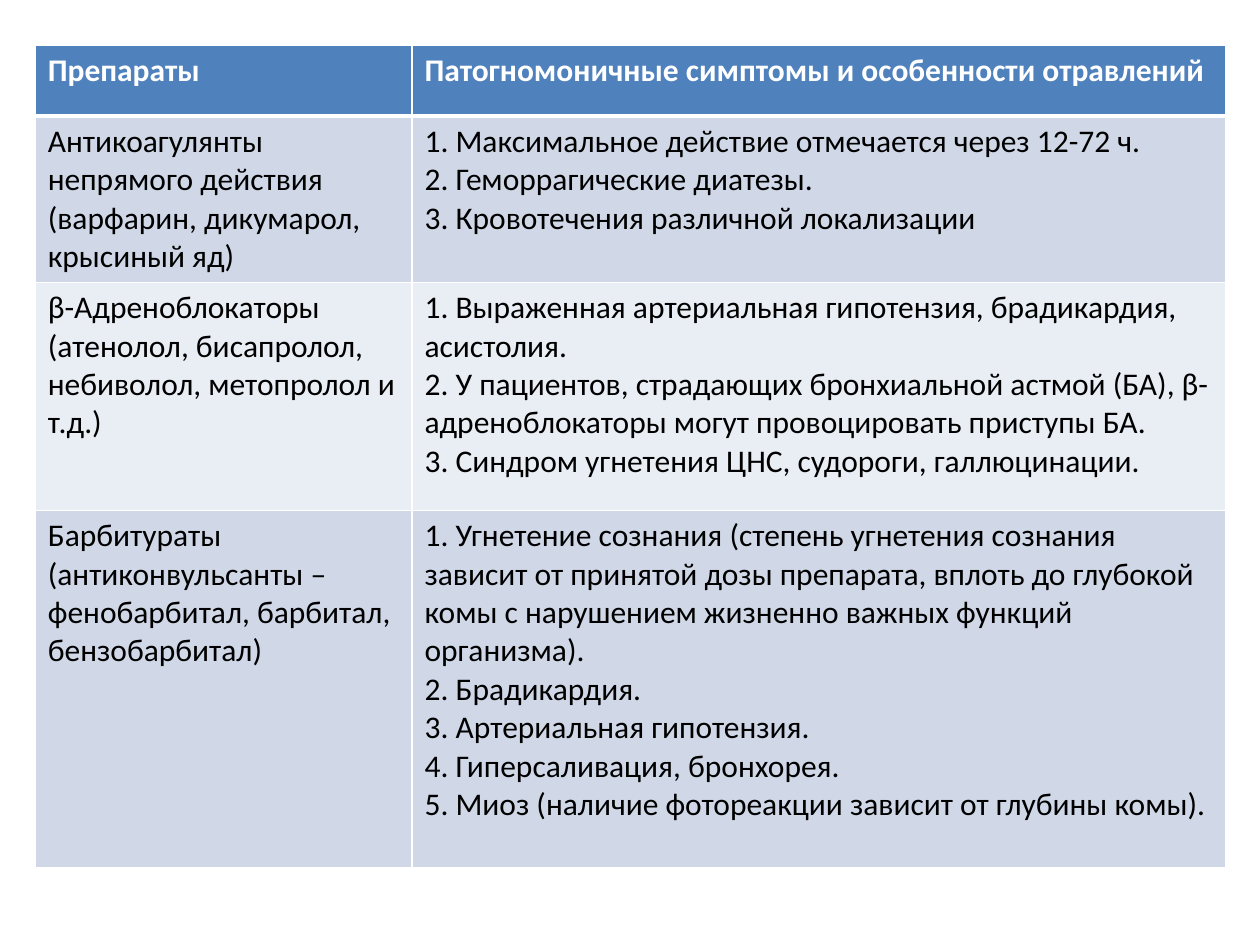
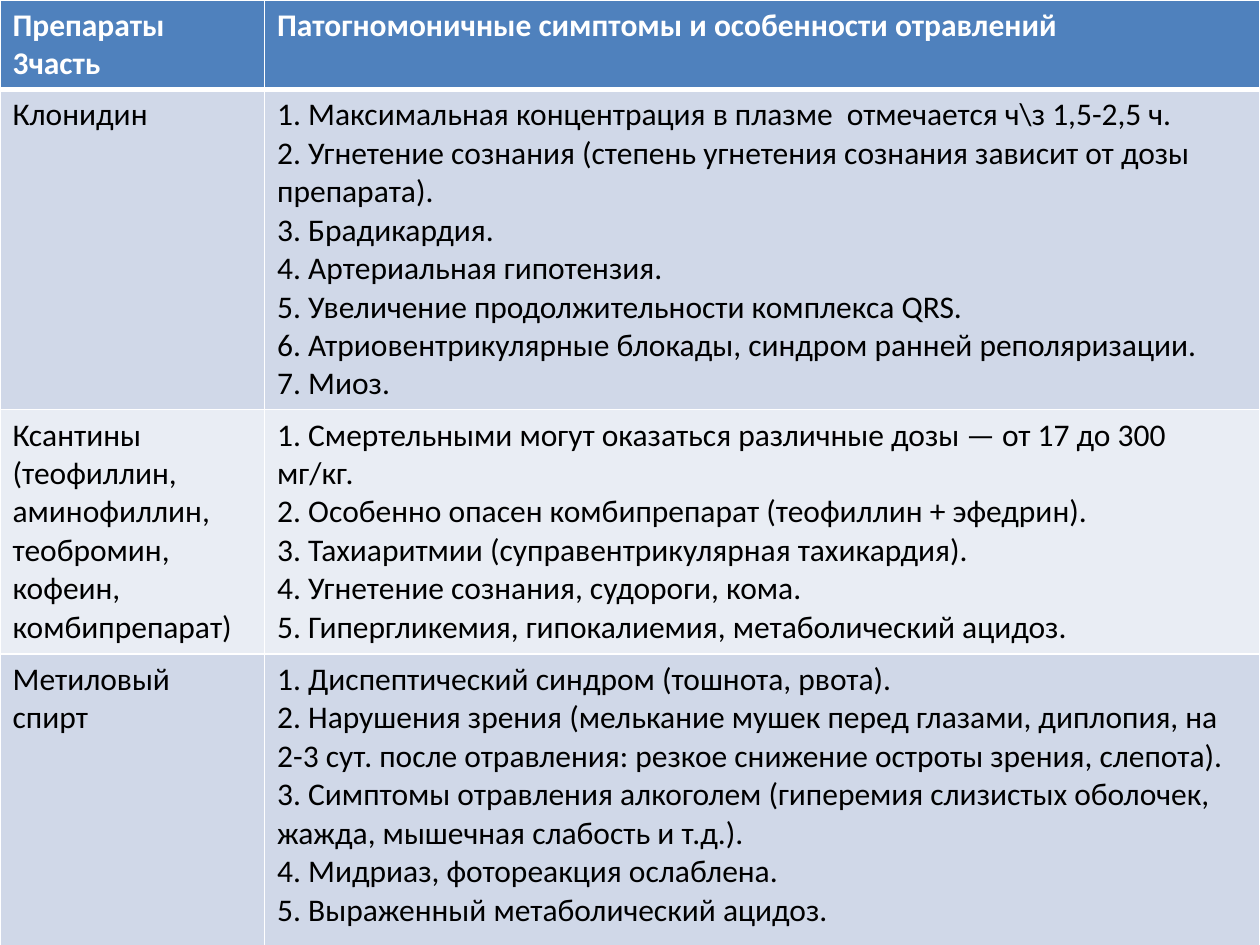
from lxml import etree
from pptx import Presentation
from pptx import util as u
from pptx.dml.color import RGBColor
from pptx.oxml.ns import qn

HEADER_FILL, BAND_FILLS = "4F81BD", ("D0D8E8", "E9EDF4")
HEADER_TEXT, BODY_TEXT, GRID = "FFFFFF", "000000", "FFFFFF"
FONT, TEXT_SIZE = "Calibri", 18
GRID_WIDTH, HEADER_RULE_WIDTH = 1, 3
SYMPTOMS = "Патогномоничные симптомы и особенности отравлений"

POISONINGS = [
    {
        "corner": (0.28, 0.36),
        "columns": (2.99, 6.46),
        "heights": (0.56, 1.31, 1.81, 2.84),
        "rows": [
            (["Препараты"], [SYMPTOMS]),
            (["Антикоагулянты", "непрямого действия",
              "(варфарин, дикумарол, крысиный яд)"],
             ["1. Максимальное действие отмечается через 12-72 ч.",
              "2. Геморрагические диатезы.",
              "3. Кровотечения различной локализации"]),
            (["β-Адреноблокаторы (атенолол, бисапролол, небиволол, метопролол и т.д.)"],
             ["1. Выраженная артериальная гипотензия, брадикардия, асистолия.",
              "2. У пациентов, страдающих бронхиальной астмой (БА), "
              "β-адреноблокаторы могут провоцировать приступы БА.",
              "3. Синдром угнетения ЦНС, судороги, галлюцинации."]),
            (["Барбитураты (антиконвульсанты – фенобарбитал, барбитал, бензобарбитал)"],
             ["1. Угнетение сознания (степень угнетения сознания зависит от принятой "
              "дозы препарата, вплоть до глубокой комы с нарушением жизненно важных "
              "функций организма).",
              "2. Брадикардия.",
              "3. Артериальная гипотензия.",
              "4. Гиперсаливация, бронхорея.",
              "5. Миоз (наличие фотореакции зависит от глубины комы)."]),
        ],
    },
    {
        "corner": (0, 0),
        "columns": (2.1, 7.9),
        "heights": (0.7, 2.54, 1.94, 3.23),
        "rows": [
            (["Препараты 3часть"], [SYMPTOMS]),
            (["Клонидин"],
             ["1. Максимальная концентрация в плазме  отмечается ч\\з 1,5-2,5 ч.",
              "2. Угнетение сознания (степень угнетения сознания зависит от дозы препарата).",
              "3. Брадикардия.",
              "4. Артериальная гипотензия.",
              "5. Увеличение продолжительности комплекса QRS.",
              "6. Атриовентрикулярные блокады, синдром ранней реполяризации.",
              "7. Миоз."]),
            (["Ксантины (теофиллин,", "аминофиллин,", "теобромин, кофеин,", "комбипрепарат)"],
             ["1. Смертельными могут оказаться различные дозы — от 17 до 300 мг/кг.",
              "2. Особенно опасен комбипрепарат (теофиллин + эфедрин).",
              "3. Тахиаритмии (суправентрикулярная тахикардия).",
              "4. Угнетение сознания, судороги, кома.",
              "5. Гипергликемия, гипокалиемия, метаболический ацидоз."]),
            (["Метиловый спирт"],
             ["1. Диспептический синдром (тошнота, рвота).",
              "2. Нарушения зрения (мелькание мушек перед глазами, диплопия, на 2-3 сут. "
              "после отравления: резкое снижение остроты зрения, слепота).",
              "3. Симптомы отравления алкоголем (гиперемия слизистых оболочек, жажда, "
              "мышечная слабость и т.д.).",
              "4. Мидриаз, фотореакция ослаблена.",
              "5. Выраженный метаболический ацидоз."]),
        ],
    },
]


def colour(hex_text):
    return RGBColor.from_string(hex_text)


def add_borders(cell, row):
    widths = {
        "L": GRID_WIDTH,
        "R": GRID_WIDTH,
        "T": HEADER_RULE_WIDTH if row == 1 else GRID_WIDTH,
        "B": HEADER_RULE_WIDTH if row == 0 else GRID_WIDTH,
    }
    properties = cell._tc.get_or_add_tcPr()
    for side, width in widths.items():
        border = etree.SubElement(properties, qn(f"a:ln{side}"), w=str(u.Pt(width)))
        fill = etree.SubElement(border, qn("a:solidFill"))
        etree.SubElement(fill, qn("a:srgbClr"), val=GRID)


def fill_cell(cell, lines, row):
    is_header = row == 0
    add_borders(cell, row)
    cell.fill.solid()
    cell.fill.fore_color.rgb = colour(HEADER_FILL if is_header else BAND_FILLS[(row - 1) % 2])
    cell.text_frame.text = "\n".join(lines)
    for paragraph in cell.text_frame.paragraphs:
        for run in paragraph.runs:
            run.font.name = FONT
            run.font.size = u.Pt(TEXT_SIZE)
            run.font.bold = is_header
            run.font.color.rgb = colour(HEADER_TEXT if is_header else BODY_TEXT)


def add_poisonings(slide, part):
    rows, columns, heights = part["rows"], part["columns"], part["heights"]
    box = (*part["corner"], sum(columns), sum(heights))
    table = slide.shapes.add_table(len(rows), len(columns), *map(u.Inches, box)).table
    for column, width in zip(table.columns, columns):
        column.width = u.Inches(width)
    for row, height in zip(table.rows, heights):
        row.height = u.Inches(height)
    for r, texts in enumerate(rows):
        for c, lines in enumerate(texts):
            fill_cell(table.cell(r, c), lines, r)


def main():
    deck = Presentation()
    deck.slide_width, deck.slide_height = u.Inches(10), u.Inches(7.5)
    for part in POISONINGS:
        add_poisonings(deck.slides.add_slide(deck.slide_layouts[6]), part)
    deck.save("out.pptx")


if __name__ == "__main__":
    main()
